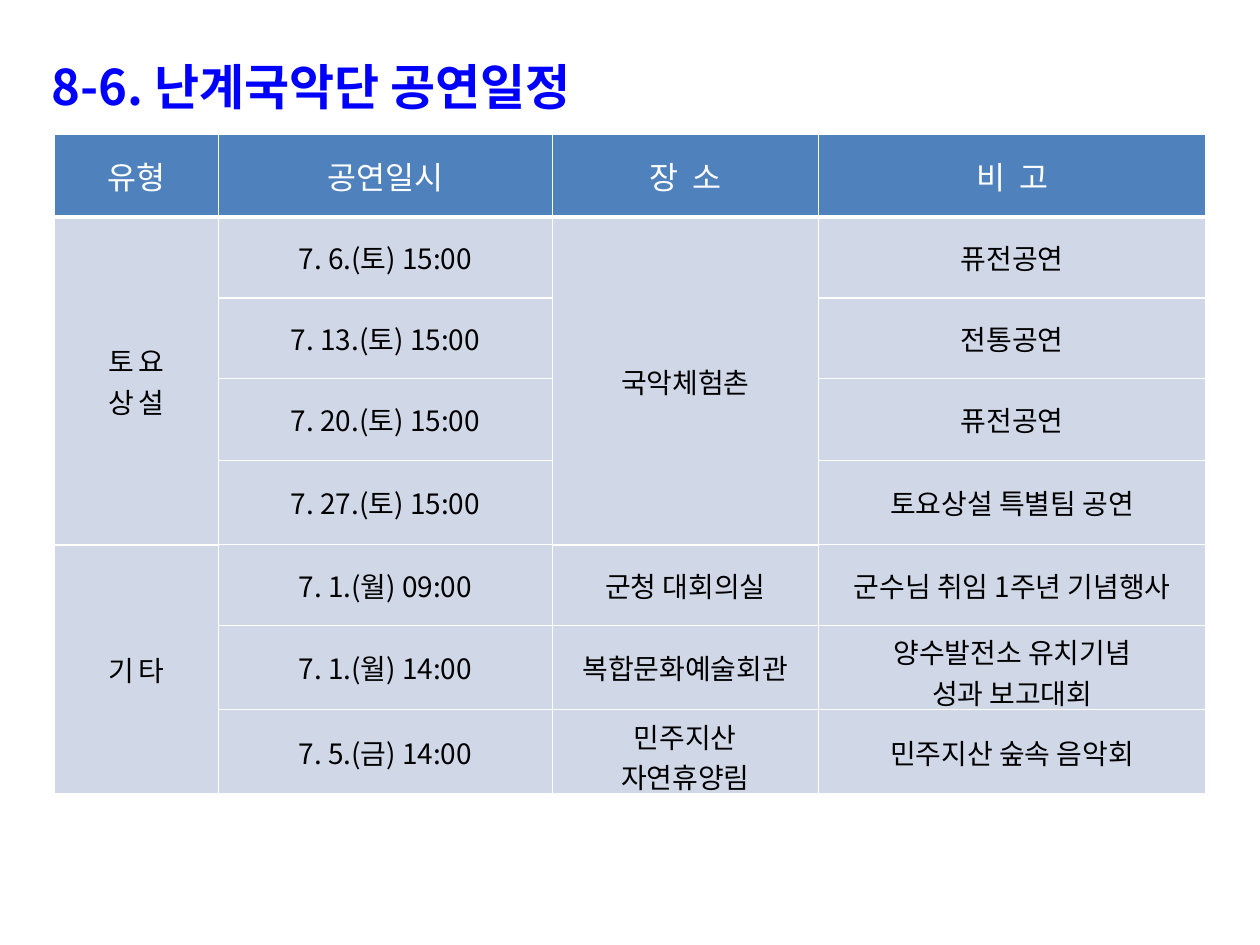
from lxml import etree
from pptx import Presentation
from pptx.dml.color import RGBColor
from pptx.enum.text import MSO_ANCHOR, MSO_AUTO_SIZE, PP_ALIGN
from pptx.oxml.ns import qn
from pptx.util import Pt

CENTER = PP_ALIGN.CENTER
MIDDLE = MSO_ANCHOR.MIDDLE
GROW = MSO_AUTO_SIZE.SHAPE_TO_FIT_TEXT
FONT = "Noto Sans CJK KR"

TITLE = "8-6. 난계국악단 공연일정"
SCHEDULE = [
    ("유형", "공연일시", "장  소", "비  고"),
    ("토  요\n상  설", "7. 6.(토) 15:00", "국악체험촌", "퓨전공연"),
    ("", "7. 13.(토) 15:00", "", "전통공연"),
    ("", "7. 20.(토) 15:00", "", "퓨전공연"),
    ("", "7. 27.(토) 15:00", "", "토요상설 특별팀 공연"),
    ("기  타", "7. 1.(월) 09:00", "군청 대회의실", "군수님 취임 1주년 기념행사"),
    ("", "7. 1.(월) 14:00", "복합문화예술회관", "양수발전소 유치기념\n성과 보고대회"),
    ("", "7. 5.(금) 14:00", "민주지산\n자연휴양림", "민주지산 숲속 음악회"),
]
MERGES = [((1, 0), (4, 0)), ((1, 2), (4, 2)), ((5, 0), (7, 0))]
COLUMN_WIDTHS = [93.6, 190.8, 152, 221.6]
ROW_HEIGHTS = [47.5, 46.1, 46.1, 46.8, 48.2, 46.1, 48.2, 48.2]
OTHER_EVENTS_ROW = 5


def color(value):
    return RGBColor.from_string(value)


def style(paragraph, size, hue, bold=False, spacing=0):
    font = paragraph.font
    font.name, font.size, font.bold = FONT, Pt(size), bold
    font.color.rgb = color(hue)
    defaults = paragraph._p.pPr.find(qn("a:defRPr"))
    latin = defaults.find(qn("a:latin"))
    east_asian = etree.Element(qn("a:ea"), typeface=FONT)
    latin.addnext(east_asian)
    if spacing:
        defaults.set("spc", str(int(spacing * 100)))


def edge_width(edge, column):
    if edge == 1:
        return 3
    if edge == OTHER_EVENTS_ROW and column in (0, 2):
        return 1.5
    return 1


def add_borders(cell, top, bottom):
    properties = cell._tc.get_or_add_tcPr()
    for side, width in (("L", 1), ("R", 1), ("T", top), ("B", bottom)):
        line = etree.SubElement(properties, qn(f"a:ln{side}"), w=str(Pt(width)))
        fill = etree.SubElement(line, qn("a:solidFill"))
        etree.SubElement(fill, qn("a:srgbClr"), val="FFFFFF")


def add_title(slide):
    box = slide.shapes.add_textbox(Pt(22.3), Pt(15.1), Pt(697.7), Pt(54.7))
    frame = box.text_frame
    frame.word_wrap = True
    frame.auto_size = GROW
    frame.text = TITLE
    heading = frame.paragraphs[0]
    heading.line_spacing = 1.4
    properties = heading._p.get_or_add_pPr()
    properties.set("marL", str(Pt(41.8)))
    properties.set("indent", str(Pt(-41.8)))
    tabs = etree.SubElement(properties, qn("a:tabLst"))
    etree.SubElement(tabs, qn("a:tab"), pos=str(Pt(390)), algn="l")
    style(heading, 28, "0000FF", bold=True)


def add_schedule(slide):
    table = slide.shapes.add_table(
        len(SCHEDULE), len(COLUMN_WIDTHS), Pt(31.2), Pt(76.6),
        Pt(sum(COLUMN_WIDTHS)), Pt(sum(ROW_HEIGHTS))).table
    table.first_row = table.horz_banding = False
    for column, width in zip(table.columns, COLUMN_WIDTHS):
        column.width = Pt(width)
    for row, height in zip(table.rows, ROW_HEIGHTS):
        row.height = Pt(height)
    for start, end in MERGES:
        table.cell(*start).merge(table.cell(*end))
    for r, entries in enumerate(SCHEDULE):
        header = r == 0
        for c, entry in enumerate(entries):
            cell = table.cell(r, c)
            add_borders(cell, edge_width(r, c), edge_width(r + 1, c))
            cell.fill.solid()
            cell.fill.fore_color.rgb = color("4F81BD" if header else "D0D8E8")
            cell.vertical_anchor = MIDDLE
            if not entry:
                continue
            cell.text = entry
            for paragraph in cell.text_frame.paragraphs:
                paragraph.alignment = CENTER
                if header:
                    style(paragraph, 18, "FFFFFF")
                else:
                    style(paragraph, 16, "000000", spacing=-1.5 if c == 0 else 0)


def main():
    deck = Presentation()
    deck.slide_width, deck.slide_height = Pt(720), Pt(540)
    slide = deck.slides.add_slide(deck.slide_layouts[6])
    add_title(slide)
    add_schedule(slide)
    deck.save("out.pptx")


if __name__ == "__main__":
    main()
